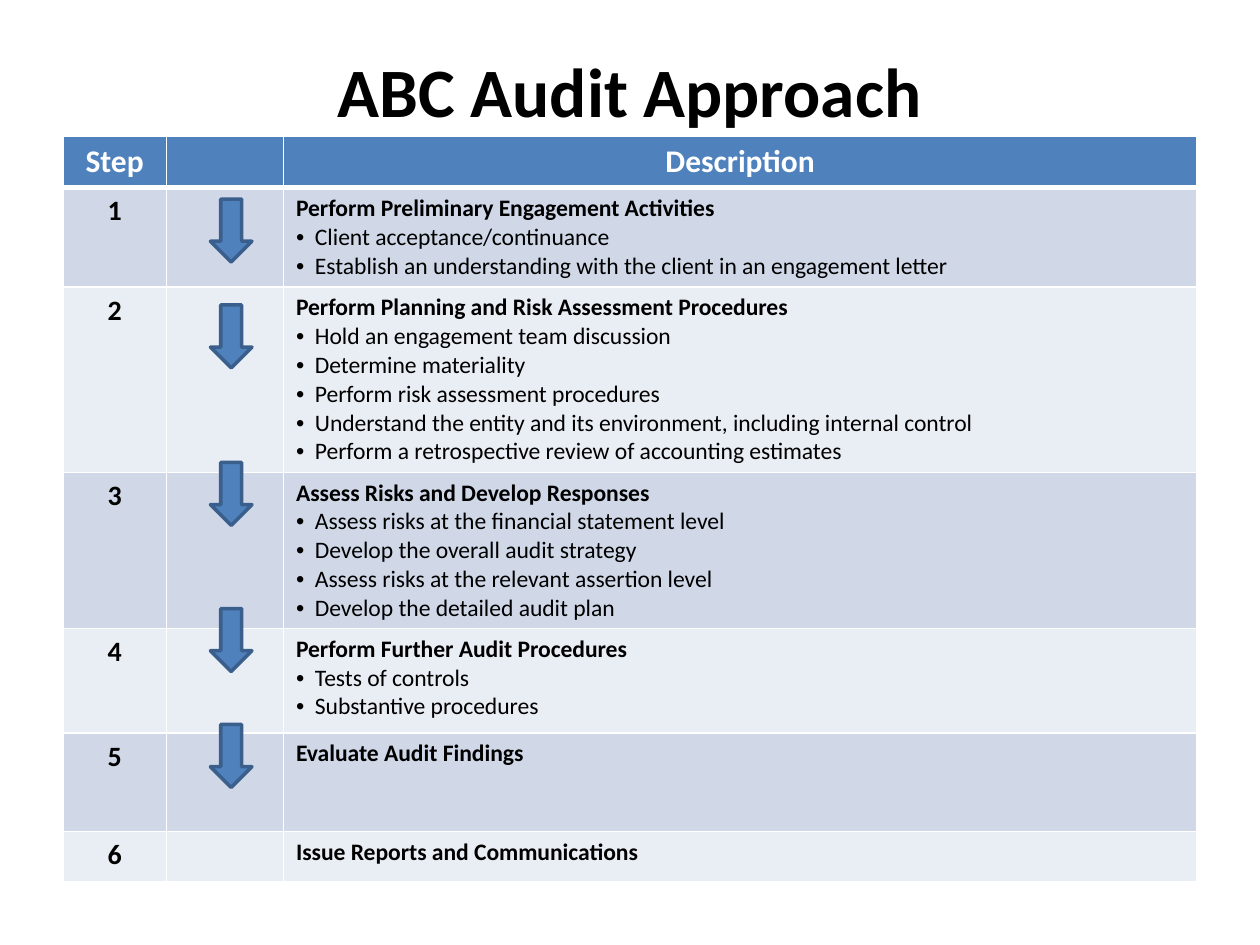
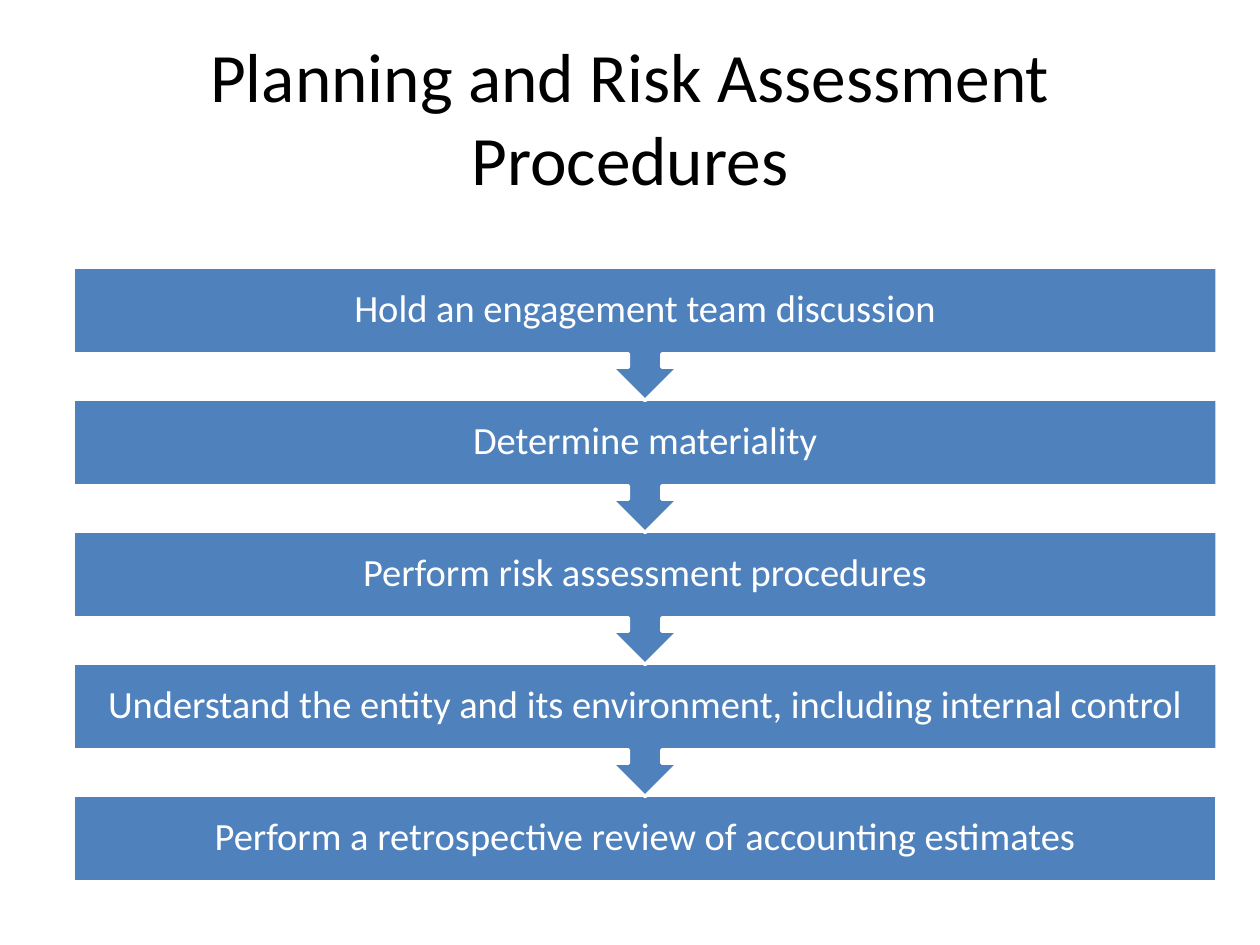
from lxml import etree
from pptx import Presentation
from pptx import util as u
from pptx.dml.color import RGBColor
from pptx.enum import shapes, text
from pptx.oxml import ns

FONT = "Calibri"
BLUE, DARK_BLUE = "4F81BD", "3A5F8C"
BANDS = ["D0D8E8", "E9EDF4"]
WHITE, BLACK = "FFFFFF", "000000"

PLANNING_TASKS = [
    "Hold an engagement team discussion",
    "Determine materiality",
    "Perform risk assessment procedures",
    "Understand the entity and its environment, including internal control",
    "Perform a retrospective review of accounting estimates",
]
STEPS = [
    ("Perform Preliminary Engagement Activities",
     ["Client acceptance/continuance",
      "Establish an understanding with the client in an engagement letter"], 0.79),
    ("Perform Planning and Risk Assessment Procedures", PLANNING_TASKS, 1.47),
    ("Assess Risks and Develop Responses",
     ["Assess risks at the financial statement level",
      "Develop the overall audit strategy",
      "Assess risks at the relevant assertion level",
      "Develop the detailed audit plan"], 1.24),
    ("Perform Further Audit Procedures",
     ["Tests of controls", "Substantive procedures"], 0.83),
    ("Evaluate Audit Findings", [], 0.78),
    ("Issue Reports and Communications", [], 0.4),
]
HEADER_HEIGHT = 0.41
COLUMN_WIDTHS = [0.82, 0.93, 7.25]
ARROW_TOPS = [0.5, 1.34, 2.59, 3.75, 4.67]


def color(value):
    return RGBColor.from_string(value)


def format_paragraph(paragraph, size, font_color, bold=False, centered=True):
    paragraph.alignment = text.PP_ALIGN.CENTER if centered else text.PP_ALIGN.LEFT
    for run in paragraph.runs:
        run.font.name = FONT
        run.font.size = u.Pt(size)
        run.font.bold = bold
        run.font.color.rgb = color(font_color)


def add_title(slide, box, wording, bold=False):
    frame = slide.shapes.add_textbox(*map(u.Inches, box)).text_frame
    frame.word_wrap = True
    frame.vertical_anchor = text.MSO_ANCHOR.MIDDLE
    frame.text = wording
    format_paragraph(frame.paragraphs[0], 39.6, BLACK, bold)


def add_block(slide, kind, box, line_color):
    shape = slide.shapes.add_shape(kind, *map(u.Inches, box))
    shape.shadow.inherit = False
    shape.fill.solid()
    shape.fill.fore_color.rgb = color(BLUE)
    shape.line.color.rgb = color(line_color)
    shape.line.width = u.Pt(2)
    return shape


def style_cell(cell, fill, top=1, bottom=1):
    properties = cell._tc.get_or_add_tcPr()
    for side, width in (("L", 1), ("R", 1), ("T", top), ("B", bottom)):
        line = etree.SubElement(properties, ns.qn(f"a:ln{side}"), w=str(u.Pt(width)))
        solid = etree.SubElement(line, ns.qn("a:solidFill"))
        etree.SubElement(solid, ns.qn("a:srgbClr"), val=WHITE)
    cell.fill.solid()
    cell.fill.fore_color.rgb = color(fill)


def add_bullet(paragraph):
    properties = paragraph._p.get_or_add_pPr()
    properties.set("marL", str(u.Inches(0.15)))
    properties.set("indent", str(-u.Inches(0.15)))
    etree.SubElement(properties, ns.qn("a:buFont"), typeface="Arial")
    etree.SubElement(properties, ns.qn("a:buChar"), char="•")


def fill_description(cell, heading, tasks):
    cell.text_frame.text = "\n".join([heading, *tasks])
    first, *others = cell.text_frame.paragraphs
    format_paragraph(first, 13.5, BLACK, bold=True, centered=False)
    for paragraph in others:
        format_paragraph(paragraph, 13.5, BLACK, centered=False)
        add_bullet(paragraph)


def add_step_table(slide, left, top):
    heights = [HEADER_HEIGHT] + [height for _, _, height in STEPS]
    box = left, top, sum(COLUMN_WIDTHS), sum(heights)
    table = slide.shapes.add_table(
        len(heights), len(COLUMN_WIDTHS), *map(u.Inches, box)).table
    for column, width in zip(table.columns, COLUMN_WIDTHS):
        column.width = u.Inches(width)
    for row, height in zip(table.rows, heights):
        row.height = u.Inches(height)

    for cell, label in zip(table.rows[0].cells, ["Step", "", "Description"]):
        style_cell(cell, BLUE, bottom=3)
        cell.text_frame.text = label
        format_paragraph(cell.text_frame.paragraphs[0], 18, WHITE, bold=True)

    for number, (heading, tasks, _) in enumerate(STEPS, 1):
        cells = list(table.rows[number].cells)
        for cell in cells:
            style_cell(cell, BANDS[(number - 1) % 2], top=3 if number == 1 else 1)
        cells[0].text_frame.text = str(number)
        format_paragraph(cells[0].text_frame.paragraphs[0], 16, BLACK, bold=True)
        fill_description(cells[2], heading, tasks)

    for arrow_top in ARROW_TOPS:
        add_block(slide, shapes.MSO_SHAPE.DOWN_ARROW,
                  (left + 1.17, top + arrow_top, 0.33, 0.5), DARK_BLUE)


def add_task_flow(slide, left, top, width, height):
    bar_height = 0.69
    pitch = (height - bar_height) / (len(PLANNING_TASKS) - 1)
    last = len(PLANNING_TASKS) - 1
    for index, task in reversed(list(enumerate(PLANNING_TASKS))):
        if index == last:
            kind, block_height = shapes.MSO_SHAPE.RECTANGLE, bar_height
        else:
            kind, block_height = shapes.MSO_SHAPE.DOWN_ARROW_CALLOUT, 1.06
        shape = add_block(
            slide, kind, (left, top + index * pitch, width, block_height), WHITE)
        frame = shape.text_frame
        frame.word_wrap = True
        frame.vertical_anchor = text.MSO_ANCHOR.MIDDLE
        frame.margin_left = frame.margin_right = u.Inches(0.17)
        frame.margin_top = frame.margin_bottom = u.Inches(0.17)
        frame.text = task
        paragraph = frame.paragraphs[0]
        paragraph.line_spacing = 0.9
        format_paragraph(paragraph, 22, WHITE)


def build_approach_slide(slide):
    add_title(slide, (0.5, 0.42, 9, 0.58), "ABC Audit Approach", bold=True)
    add_step_table(slide, 0.5, 1.08)


def build_planning_slide(slide):
    add_title(slide, (0.5, 0.3, 9, 1.25), "Planning and Risk Assessment Procedures")
    add_task_flow(slide, 0.58, 2.12, 9.08, 4.88)


def main():
    presentation = Presentation()
    presentation.slide_width = u.Inches(10)
    presentation.slide_height = u.Inches(7.5)
    for build_slide in (build_approach_slide, build_planning_slide):
        build_slide(presentation.slides.add_slide(presentation.slide_layouts[6]))
    presentation.save("out.pptx")


if __name__ == "__main__":
    main()
